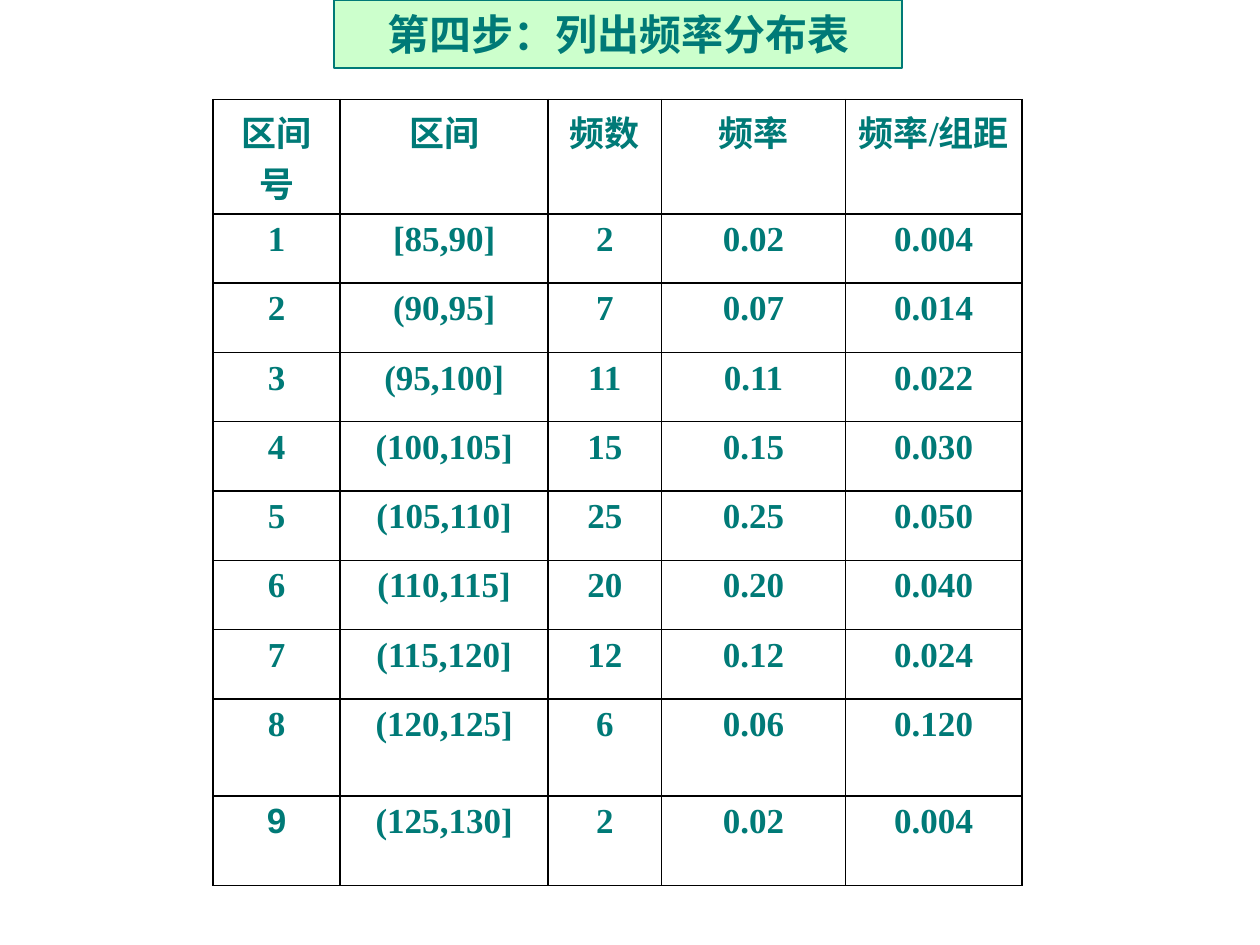
"""Build the frequency distribution table slide."""
from lxml.etree import SubElement
from pptx import Presentation
from pptx.dml.color import RGBColor as RGB
from pptx.enum.shapes import MSO_SHAPE as SHAPE
from pptx.enum.text import MSO_ANCHOR as ANCHOR, PP_ALIGN as ALIGN
from pptx.oxml.ns import qn
from pptx.util import Inches, Pt

TITLE = "第四步：列出频率分布表"
HEADER = ("区间号", "区间", "频数", "频率", "频率/组距")
ROWS = [
    ("1", "[85,90]", "2", "0.02", "0.004"),
    ("2", "(90,95]", "7", "0.07", "0.014"),
    ("3", "(95,100]", "11", "0.11", "0.022"),
    ("4", "(100,105]", "15", "0.15", "0.030"),
    ("5", "(105,110]", "25", "0.25", "0.050"),
    ("6", "(110,115]", "20", "0.20", "0.040"),
    ("7", "(115,120]", "12", "0.12", "0.024"),
    ("8", "(120,125]", "6", "0.06", "0.120"),
    ("9", "(125,130]", "2", "0.02", "0.004"),
]
COL_WIDTHS = (1.01, 1.65, 0.9, 1.46, 1.4)
ROW_HEIGHTS = (0.9, *[0.55] * 7, 0.77, 0.71)
TABLE_LEFT, TABLE_TOP = 1.69, 0.79
TITLE_BOX = (2.65, 0, 4.51, 0.54)
THEME = {
    "ink": "007A77",
    "title_fill": "CCFFCC",
    "border": "000000",
    "title": {"name": "Arial", "size": Pt(24), "bold": True},
    "cell": {"name": "Times New Roman", "size": Pt(20), "bold": True},
    "last_number": {"name": "Arial", "size": Pt(20), "bold": True},
}


def write(tf, text, style):
    p = tf.paragraphs[0]
    p.alignment = ALIGN.CENTER
    r = p.add_run()
    r.text = text
    for key, value in THEME[style].items():
        setattr(r.font, key, value)
    r.font.color.rgb = RGB.from_string(THEME["ink"])


def add_borders(cell):
    props = cell._tc.get_or_add_tcPr()
    for index, side in enumerate(("lnL", "lnR", "lnT", "lnB")):
        line = props.makeelement(qn(f"a:{side}"), {"w": str(Pt(1))})
        fill = SubElement(line, qn("a:solidFill"))
        SubElement(fill, qn("a:srgbClr"), val=THEME["border"])
        props.insert(index, line)


def add_frequency_table(s):
    data = [HEADER, *ROWS]
    size = (sum(COL_WIDTHS), sum(ROW_HEIGHTS))
    frame = s.shapes.add_table(
        len(data), len(HEADER), *map(Inches, (TABLE_LEFT, TABLE_TOP, *size))
    )
    table = frame.table
    table.first_row = table.horz_banding = False
    for col, width in zip(table.columns, COL_WIDTHS):
        col.width = Inches(width)
    for row, height, values in zip(table.rows, ROW_HEIGHTS, data):
        row.height = Inches(height)
        for cell, value in zip(row.cells, values):
            write(cell.text_frame, value, "last_number" if value == "9" else "cell")
            cell.fill.background()
            add_borders(cell)


def add_title(s):
    sp = s.shapes.add_shape(SHAPE.RECTANGLE, *map(Inches, TITLE_BOX))
    sp.shadow.inherit = False
    sp.fill.solid()
    sp.fill.fore_color.rgb = RGB.from_string(THEME["title_fill"])
    sp.line.color.rgb = RGB.from_string(THEME["ink"])
    sp.line.width = Pt(0.75)
    tf = sp.text_frame
    tf.word_wrap = False
    tf.vertical_anchor = ANCHOR.MIDDLE
    write(tf, TITLE, "title")


def main():
    prs = Presentation()
    prs.slide_width, prs.slide_height = Inches(10), Inches(7.5)
    s = prs.slides.add_slide(prs.slide_layouts[6])
    add_frequency_table(s)
    add_title(s)
    prs.save("out.pptx")


if __name__ == "__main__":
    main()
